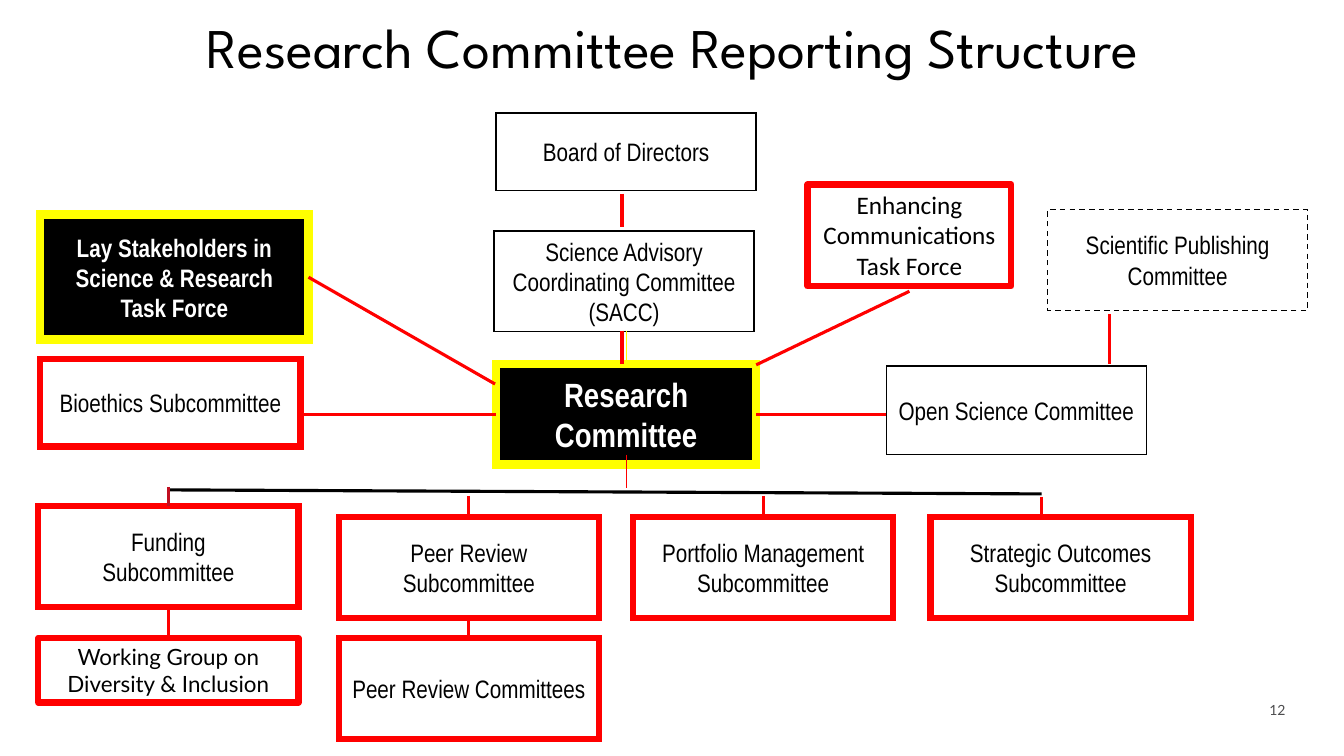
"""Build the slide of the research committee reporting structure."""
from dataclasses import dataclass
from typing import Any, Optional

from lxml.etree import SubElement
from pptx import Presentation
from pptx.dml.color import RGBColor
from pptx.enum.dml import MSO_LINE
from pptx.enum.shapes import MSO_CONNECTOR, MSO_SHAPE
from pptx.enum.text import MSO_ANCHOR, MSO_AUTO_SIZE, PP_ALIGN
from pptx.oxml.ns import qn
from pptx.util import Inches, Pt

BLACK = RGBColor(0x00, 0x00, 0x00)
WHITE = RGBColor(0xFF, 0xFF, 0xFF)
RED = RGBColor(0xFF, 0x00, 0x00)
CRIMSON = RGBColor(0xC1, 0x0E, 0x20)
YELLOW = RGBColor(0xFF, 0xFF, 0x00)
GREY = RGBColor(0x4D, 0x4D, 0x4F)

TOP, LEFT, BOTTOM, RIGHT = range(4)
WIDE = 2.58


@dataclass(frozen=True)
class Style:
    fill: Optional[RGBColor] = WHITE
    edge: RGBColor = RED
    weight: float = 4.5
    dash: bool = False
    grow: bool = False
    face: str = "Arial Narrow"
    size: int = 18
    ink: RGBColor = BLACK
    bold: bool = False


@dataclass(frozen=True)
class Box:
    key: str
    text: str
    x: float
    y: float
    high: float = 1
    wide: float = WIDE
    style: Style = Style()


@dataclass(frozen=True)
class Link:
    start: tuple[float, float]
    end: tuple[float, float]
    ink: RGBColor = RED
    weight: float = 2.25
    tail: Optional[tuple[str, int]] = None
    head: Optional[tuple[str, int]] = None


RED_BOX = Style()
THIN = Style(edge=BLACK, weight=1)
DASHED = Style(edge=BLACK, weight=1, dash=True)
BRIGHT = Style(BLACK, YELLOW, 6, ink=WHITE, bold=True)
CHIEF = Style(BLACK, YELLOW, 6, size=24, ink=WHITE, bold=True)
FORCE = Style(None, grow=True, face="Calibri")
GROUP = Style(grow=True, face="Lato", size=16)

BOXES = [
    Box("board", "Board of Directors", 4.92, 1.12, 0.77, style=THIN),
    Box("research", "Research\nCommittee", 4.92, 3.61, style=CHIEF),
    Box("review", "Peer Review Subcommittee", 3.36, 5.13),
    Box("assets", "Portfolio Management\nSubcommittee", 6.28, 5.13),
    Box("outcomes", "Strategic Outcomes\nSubcommittee", 9.23, 5.13),
    Box("funding", "Funding\nSubcommittee", 0.38, 5.02),
    Box("ethics", "Bioethics Subcommittee", 0.4, 3.56, 0.87),
    Box("open", "Open Science Committee", 8.79, 3.63, 0.88, style=THIN),
    Box("publish", "Scientific Publishing Committee", 10.39, 2.08, style=DASHED),
    Box("peers", "Peer Review Committees", 3.36, 6.33),
    Box("advice", "Science Advisory Coordinating Committee (SACC)", 4.9, 2.29, style=THIN),
    Box("lay", "Lay Stakeholders in Science & Research\nTask Force",
        0.4, 2.13, 1.24, 2.66, BRIGHT),
    Box("force", "Enhancing Communications Task Force", 8.01, 1.83, 1.01, 2.02, FORCE),
    Box("group", "Working Group on Diversity & Inclusion", 0.38, 6.33, 0.64, style=GROUP),
]

LINKS = [
    Link((6.17, 1.92), (6.17, 2.25)),
    Link((6.21, 3.28), (6.21, 3.61), YELLOW, 0.5, head=("research", TOP)),
    Link((7.5, 4.11), (8.79, 4.11), tail=("research", RIGHT)),
    Link((11, 3.61), (11, 3.12)),
    Link((1.67, 4.86), (10.33, 4.9), BLACK),
    Link((6.21, 4.51), (6.21, 4.84), weight=0.5),
    Link((1.67, 4.83), (1.67, 5.02), CRIMSON, head=("funding", TOP)),
    Link((4.65, 4.92), (4.65, 5.13), head=("review", TOP)),
    Link((7.57, 4.92), (7.57, 5.13), head=("assets", TOP)),
    Link((10.33, 4.93), (10.33, 5.13)),
    Link((4.65, 6.13), (4.65, 6.33), tail=("review", BOTTOM), head=("peers", TOP)),
    Link((2.98, 4.11), (4.92, 4.11), head=("research", LEFT)),
    Link((3.06, 2.75), (4.91, 3.81), tail=("lay", RIGHT)),
    Link((1.67, 6.33), (1.67, 6.02), tail=("group", TOP), head=("funding", BOTTOM)),
    Link((9.02, 2.89), (7.5, 3.62)),
    Link((6.17, 3.28), (6.17, 3.61)),
]


def assign(target: Any, values: dict[str, Any]) -> None:
    """Set each named value on the target."""
    for name, value in values.items():
        setattr(target, name, value)


def write(shape: Any, text: str, style: Style, align: PP_ALIGN, wrap: bool = True) -> None:
    """Fill a shape with styled text."""
    frame = shape.text_frame
    assign(frame, {
        "text": text,
        "word_wrap": wrap,
        "auto_size": MSO_AUTO_SIZE.SHAPE_TO_FIT_TEXT if style.grow else MSO_AUTO_SIZE.NONE,
        "vertical_anchor": MSO_ANCHOR.TOP if style.grow else MSO_ANCHOR.MIDDLE,
    })
    for para in frame.paragraphs:
        para.alignment = align
        assign(para.font, {"name": style.face, "size": Pt(style.size), "bold": style.bold})
        para.font.color.rgb = style.ink


def add_box(slide: Any, box: Box) -> Any:
    """Draw one box and return it."""
    style = box.style
    shape = slide.shapes.add_shape(
        MSO_SHAPE.RECTANGLE, *map(Inches, (box.x, box.y, box.wide, box.high)))
    shape.shadow.inherit = False
    if style.fill is None:
        shape.fill.background()
    else:
        shape.fill.solid()
        shape.fill.fore_color.rgb = style.fill
    shape.line.color.rgb = style.edge
    shape.line.width = Pt(style.weight)
    if style.dash:
        shape.line.dash_style = MSO_LINE.DASH
    if not style.grow:
        edge = shape.element.spPr.find(qn("a:ln"))
        SubElement(edge, qn("a:miter"), lim="800000")
    write(shape, box.text, style, PP_ALIGN.CENTER)
    return shape


def add_link(slide: Any, link: Link, shapes: dict[str, Any]) -> None:
    """Draw one line and join it to its boxes."""
    line = slide.shapes.add_connector(
        MSO_CONNECTOR.STRAIGHT, *map(Inches, link.start + link.end))
    line.line.color.rgb = link.ink
    line.line.width = Pt(link.weight)
    SubElement(line.element.spPr, qn("a:effectLst"))
    for site, join in ((link.tail, line.begin_connect), (link.head, line.end_connect)):
        if site:
            join(shapes[site[0]], site[1])


def main() -> None:
    """Build and save the slide."""
    deck = Presentation()
    deck.slide_width, deck.slide_height = Inches(13.33), Inches(7.5)
    slide = deck.slides.add_slide(deck.slide_layouts[6])
    number = slide.shapes.add_textbox(*map(Inches, (12.49, 6.91, 0.39, 0.27)))
    write(number, "12", Style(grow=True, face="Lato", size=10, ink=GREY), PP_ALIGN.LEFT, False)
    shapes = {box.key: add_box(slide, box) for box in BOXES}
    for link in LINKS:
        add_link(slide, link, shapes)
    title = slide.shapes.add_textbox(*map(Inches, (0.2, 0.07, 12.94, 1.45)))
    write(title, "Research Committee Reporting Structure",
          Style(grow=True, face="League Spartan", size=40), PP_ALIGN.CENTER)
    deck.save("out.pptx")


if __name__ == "__main__":
    main()
